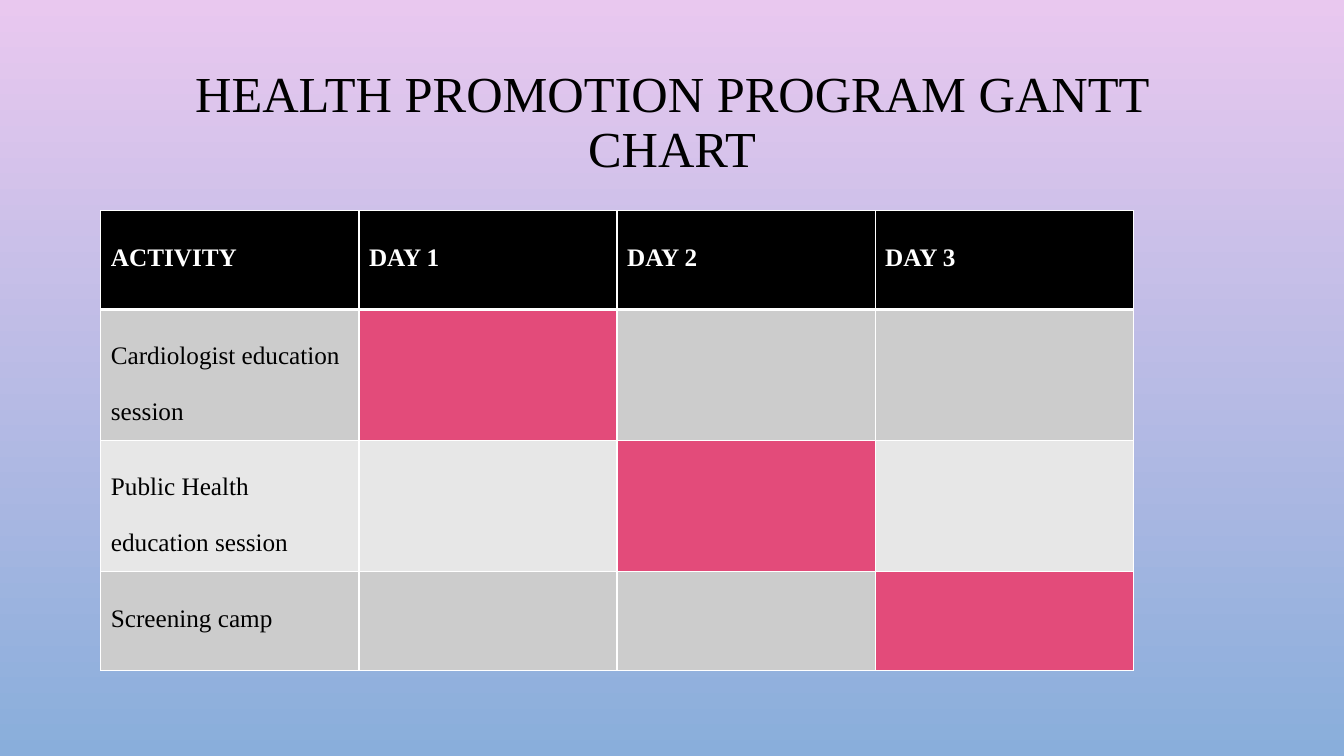
from pptx import Presentation, util as u
from pptx.dml.color import RGBColor
from pptx.enum import text
from pptx.oxml import parse_xml
from pptx.oxml.ns import nsdecls

PX = 9144
FONT = "Times New Roman"
HUES = {"top": "E9C8EF", "base": "89AEDB", "ink": "000000", "line": "FFFFFF",
        "odd": "CCCCCC", "even": "E7E7E7", "mark": "E34B7A"}


def write(para, words, size, hue, bold=False):
    run = para.add_run()
    run.text = words
    run.font.name = FONT
    run.font.size = u.Pt(size)
    run.font.bold = bold
    run.font.color.rgb = RGBColor.from_string(HUES[hue])


def edge(cell, side, width, place):
    line = parse_xml(
        f'<a:ln{side} {nsdecls("a")} w="{width * 12700}"><a:solidFill>'
        f'<a:srgbClr val="{HUES["line"]}"/></a:solidFill></a:ln{side}>')
    cell._tc.get_or_add_tcPr().insert(place, line)


deck = Presentation()
deck.slide_width, deck.slide_height = 1333 * PX, 750 * PX
slide = deck.slides.add_slide(deck.slide_layouts[6])

back = slide.background.fill
back.gradient()
back.gradient_angle = 270
for stop, hue, spot in zip(back.gradient_stops, ("top", "base"), (0, 1)):
    stop.color.rgb = RGBColor.from_string(HUES[hue])
    stop.position = spot

title = slide.shapes.add_textbox(100 * PX, 35 * PX, 1133 * PX, 175 * PX).text_frame
title.word_wrap = True
title.vertical_anchor = text.MSO_ANCHOR.MIDDLE
head = title.paragraphs[0]
head.alignment = text.PP_ALIGN.CENTER
head.line_spacing = 0.9
write(head, "HEALTH PROMOTION PROGRAM GANTT CHART", 36, "ink")

days = ["ACTIVITY", "DAY 1", "DAY 2", "DAY 3"]
tasks = [("Cardiologist education session", 1),
         ("Public Health education session", 2),
         ("Screening camp", 3)]
rows = len(tasks) + 1
cols = len(days)
chart = slide.shapes.add_table(rows, cols, 100 * PX, 209 * PX,
                               256 * cols * PX, 98 * rows * PX).table

for r in range(rows):
    for c in range(cols):
        cell = chart.cell(r, c)
        para = cell.text_frame.paragraphs[0]
        para.line_spacing = 2.0
        if r == 0:
            hue = "ink"
            write(para, days[c], 18, "line", True)
        else:
            task, day = tasks[r - 1]
            hue = "mark" if c == day else "odd" if r % 2 else "even"
            if c == 0:
                write(para, task, 18, "ink")
        cell.fill.solid()
        cell.fill.fore_color.rgb = RGBColor.from_string(HUES[hue])
        widths = {"L": 1, "R": 1, "T": 3 if r == 1 else 1, "B": 3 if r == 0 else 1}
        for place, (side, width) in enumerate(widths.items()):
            edge(cell, side, width, place)

deck.save("out.pptx")
